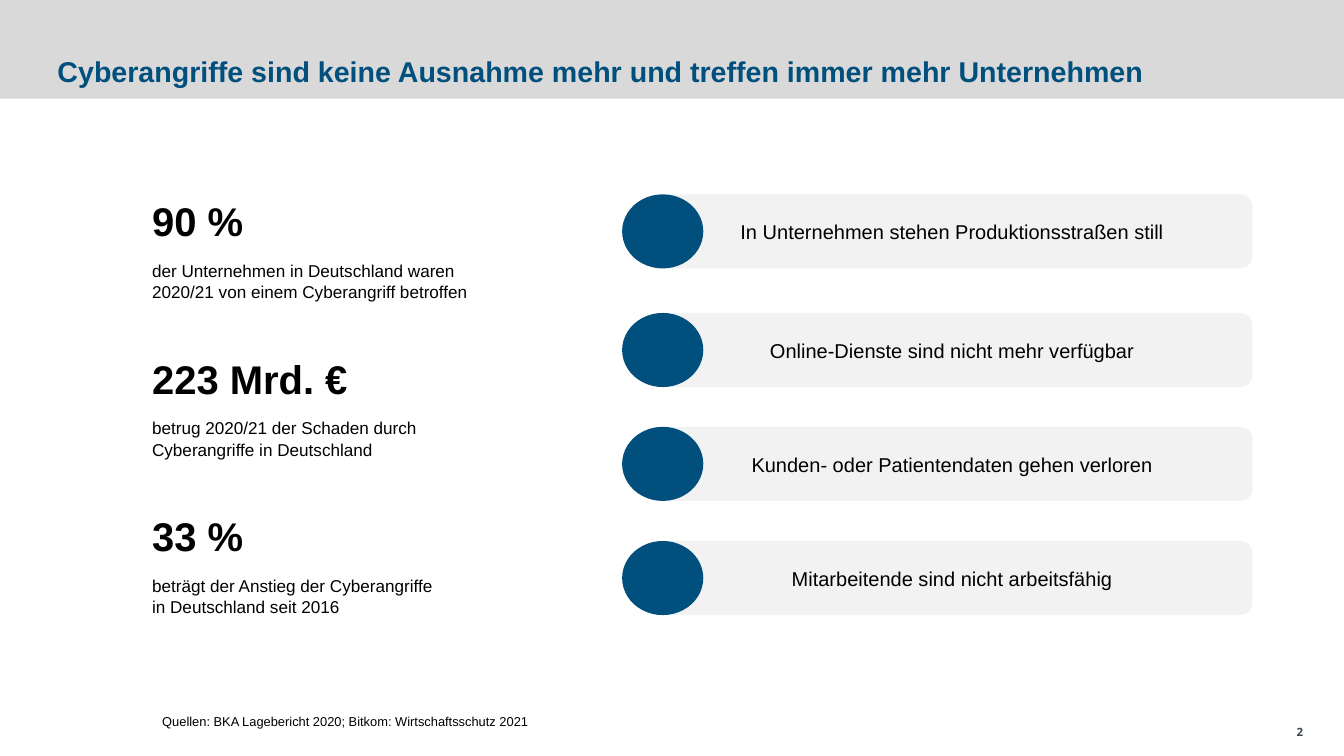
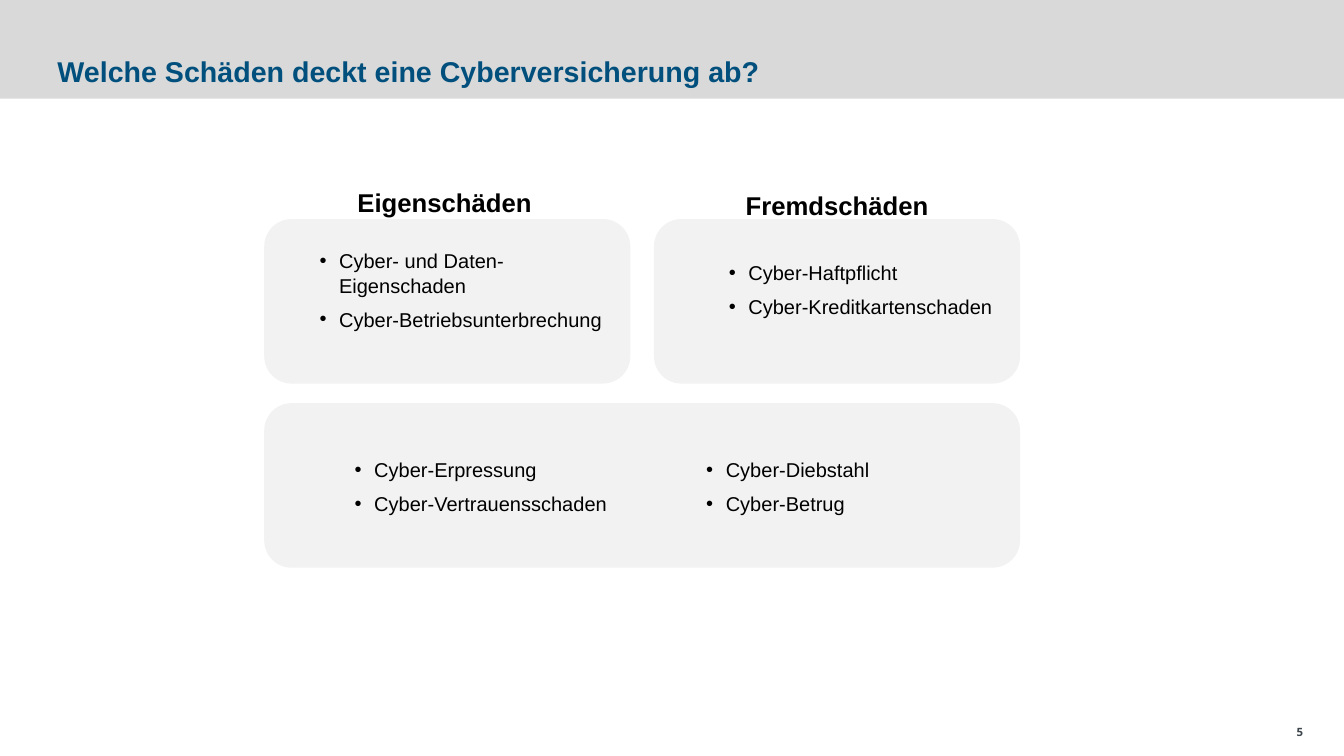
from dataclasses import dataclass, field
from typing import Any

from lxml.etree import SubElement
from pptx import Presentation
from pptx.dml.color import RGBColor
from pptx.enum.shapes import MSO_SHAPE
from pptx.enum.text import MSO_ANCHOR, PP_ALIGN
from pptx.oxml.ns import qn
from pptx.util import Inches, Pt

WIDTH, HEIGHT = Inches(13.07), Inches(7.35)
COLORS = {"blue": "004F7C", "band": "D9D9D9", "card": "F2F2F2",
          "text": "000000", "page": "3B454B"}


@dataclass(frozen=True)
class Box:
    """A rectangle in percent of the slide's width and height."""
    x: float
    y: float
    w: float
    h: float

    def emu(self) -> tuple[int, int, int, int]:
        """Return left, top, width and height in EMU."""
        return (round(self.x * WIDTH / 100), round(self.y * HEIGHT / 100),
                round(self.w * WIDTH / 100), round(self.h * HEIGHT / 100))


@dataclass(frozen=True)
class Style:
    """Text format; inset is left, top, right, bottom in inches."""
    size: float = 14
    bold: bool = False
    color: str = "text"
    font: str = "Arial"
    align: PP_ALIGN = PP_ALIGN.LEFT
    anchor: MSO_ANCHOR = MSO_ANCHOR.TOP
    inset: tuple[float, float, float, float] = (0, 0, 0, 0)
    wrap: bool = True
    spacing: float = 1.05
    bullet: float = 0


@dataclass(frozen=True)
class Stat:
    """A key figure, its explanation and the width of the explanation."""
    figure: str
    note: str
    width: float


@dataclass(frozen=True)
class Effect:
    """A consequence shown on a bar, with the top of the bar."""
    text: str
    top: float


@dataclass(frozen=True)
class Damage:
    """A headed card with a bulleted list."""
    heading: str
    heading_at: tuple[float, float]
    left: float
    items: list[str] = field(default_factory=list)
    indent: float = 0.84


PAD = (0.1, 0.05, 0.1, 0.05)
TITLE = Style(20, True, "blue", anchor=MSO_ANCHOR.BOTTOM, inset=(0, 0.05, 0, 0.05))
PAGE = Style(8, True, "page", "Open Sans", anchor=MSO_ANCHOR.MIDDLE, wrap=False, spacing=1)
FIGURE = Style(28, True)
NOTE = Style(12)
SOURCE = Style(9, inset=PAD)
EFFECT = Style(align=PP_ALIGN.CENTER, anchor=MSO_ANCHOR.MIDDLE, inset=(0.46, 0, 0.51, 0))
HEADING = Style(18, True, align=PP_ALIGN.CENTER)
LIST = Style(inset=PAD, bullet=0.84)

STATS = [
    Stat("90 %", "der Unternehmen in Deutschland waren 2020/21 von einem "
         "Cyberangriff betroffen", 23.57),
    Stat("223 Mrd. €", "betrug 2020/21 der Schaden durch Cyberangriffe in Deutschland", 21.81),
    Stat("33 %", "beträgt der Anstieg der Cyberangriffe in Deutschland seit 2016", 21.81),
]
EFFECTS = [
    Effect("In Unternehmen stehen Produktionsstraßen still", 25.71),
    Effect("Online-Dienste sind nicht mehr verfügbar", 41.4),
    Effect("Kunden- oder Patientendaten gehen verloren", 56.46),
    Effect("Mitarbeitende sind nicht arbeitsfähig", 71.56),
]
DAMAGES = [
    Damage("Eigenschäden", (19.46, 24.49), 19.66,
           ["Cyber- und Daten-Eigenschaden", "Cyber-Betriebsunterbrechung"], 0.65),
    Damage("Fremdschäden", (48.66, 24.9), 48.66,
           ["Cyber-Haftpflicht", "Cyber-Kreditkartenschaden"]),
]
SHARED_LISTS = [
    (Box(20.66, 59.73, 28, 8.98), ["Cyber-Erpressung", "Cyber-Vertrauensschaden"]),
    (Box(46.82, 59.73, 25.63, 8.98), ["Cyber-Diebstahl", "Cyber-Betrug"]),
]
TOP, CARD_W, CARD_H = 25.71, 27.24, 21.77


def rgb(name: str) -> RGBColor:
    """Look up a named colour."""
    return RGBColor.from_string(COLORS[name])


def assign(obj: Any, values: dict[str, Any]) -> None:
    """Set attributes from a dict of format values."""
    for name, value in values.items():
        setattr(obj, name, value)


def add_bullet(p: Any, indent: float) -> None:
    """Give a paragraph a hanging bullet."""
    pPr = p._p.get_or_add_pPr()
    pPr.set("marL", str(Inches(indent)))
    pPr.set("indent", str(Inches(-0.19)))
    SubElement(pPr, qn("a:buFont")).set("typeface", "Arial")
    SubElement(pPr, qn("a:buChar")).set("char", "•")


def write(tf: Any, lines: list[str], style: Style) -> None:
    """Fill a text frame with one paragraph per line."""
    sides = ("margin_left", "margin_top", "margin_right", "margin_bottom")
    assign(tf, dict(zip(sides, map(Inches, style.inset))))
    assign(tf, {"word_wrap": style.wrap, "vertical_anchor": style.anchor})
    for i, line in enumerate(lines):
        p = tf.add_paragraph() if i else tf.paragraphs[0]
        if style.bullet:
            add_bullet(p, style.bullet)
        assign(p, {"alignment": style.align, "line_spacing": style.spacing,
                   "space_before": Pt(6 if i else 0)})
        r = p.add_run()
        r.text = line
        assign(r.font, {"size": Pt(style.size), "bold": style.bold, "name": style.font})
        r.font.color.rgb = rgb(style.color)


def add_text(s: Any, box: Box, lines: list[str], style: Style) -> None:
    """Add a text box."""
    write(s.shapes.add_textbox(*box.emu()).text_frame, lines, style)


def add_panel(s: Any, kind: MSO_SHAPE, box: Box, color: str) -> Any:
    """Add a flat filled shape without outline."""
    sp = s.shapes.add_shape(kind, *box.emu())
    sp.shadow.inherit = False
    sp.fill.solid()
    sp.fill.fore_color.rgb = rgb(color)
    sp.line.fill.background()
    return sp


def add_slide(prs: Any, title: str, number: int) -> Any:
    """Add a blank slide with band, title and page number."""
    s = prs.slides.add_slide(prs.slide_layouts[6])
    add_panel(s, MSO_SHAPE.RECTANGLE, Box(0, 0, 100, 13.06), "band")
    add_text(s, Box(4.28, 6.39, 88.91, 5.99), [title], TITLE)
    add_text(s, Box(96.48, 95.92, 1.07, 1.77), [str(number)], PAGE)
    return s


def build_threats(prs: Any) -> None:
    """Build the slide on attacks and their effects."""
    s = add_slide(prs, "Cyberangriffe sind keine Ausnahme mehr und treffen "
                  "immer mehr Unternehmen", 2)
    for i, stat in enumerate(STATS):
        y = TOP + i * 20.82
        add_text(s, Box(11.32, y, 23.57, 6.39), [stat.figure], FIGURE)
        add_text(s, Box(11.32, y + 8.57, stat.width, 5.44), [stat.note], NOTE)
    for effect in EFFECTS:
        bar = add_panel(s, MSO_SHAPE.ROUNDED_RECTANGLE,
                        Box(48.89, effect.top, 44.3, 9.8), "card")
        write(bar.text_frame, [effect.text], EFFECT)
        add_panel(s, MSO_SHAPE.OVAL, Box(46.29, effect.top, 6.04, 9.8), "blue")
    add_text(s, Box(11.32, 93.61, 61.51, 3.4),
             ["Quellen: BKA Lagebericht 2020; Bitkom: Wirtschaftsschutz 2021"], SOURCE)


def build_cover(prs: Any) -> None:
    """Build the slide on insured damages."""
    s = add_slide(prs, "Welche Schäden deckt eine Cyberversicherung ab?", 5)
    for damage in DAMAGES:
        card = add_panel(s, MSO_SHAPE.ROUNDED_RECTANGLE,
                         Box(damage.left, 28.98, CARD_W, CARD_H), "card")
        write(card.text_frame, damage.items,
              Style(anchor=MSO_ANCHOR.MIDDLE, inset=(0, 0, 0.1, 0.24), bullet=damage.indent))
        add_text(s, Box(*damage.heading_at, CARD_W, 4.08), [damage.heading], HEADING)
    left, right = DAMAGES[0].left, DAMAGES[-1].left + CARD_W
    add_panel(s, MSO_SHAPE.ROUNDED_RECTANGLE,
              Box(left, 53.33, right - left, CARD_H), "card")
    for box, items in SHARED_LISTS:
        add_text(s, box, items, LIST)


def main() -> None:
    """Create and save the presentation."""
    prs = Presentation()
    assign(prs, {"slide_width": WIDTH, "slide_height": HEIGHT})
    build_threats(prs)
    build_cover(prs)
    prs.save("out.pptx")


if __name__ == "__main__":
    main()
